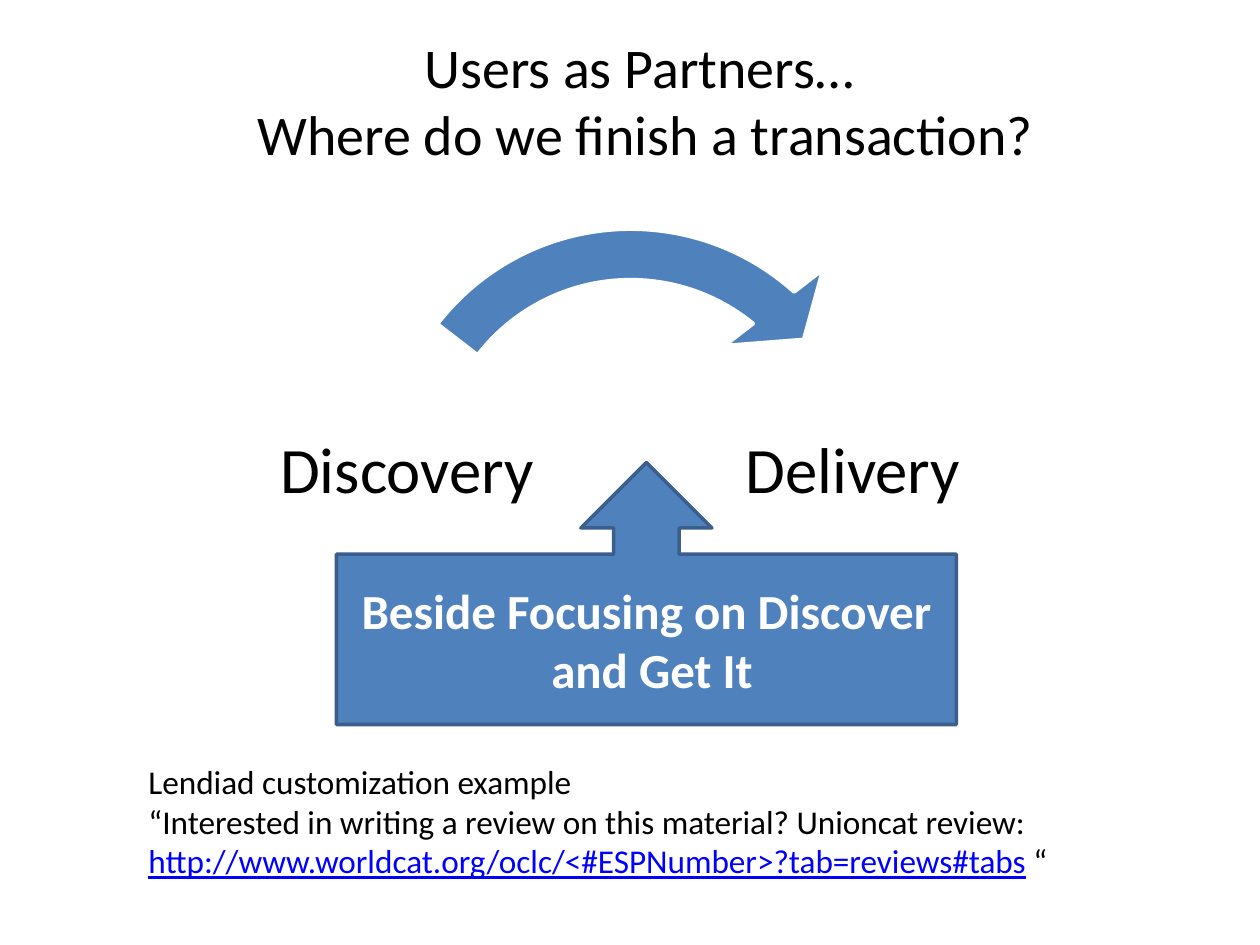
from dataclasses import dataclass

import pptx
import pptx.dml.color
import pptx.enum.shapes
import pptx.enum.text
import pptx.util

Inches = pptx.util.Inches
Pt = pptx.util.Pt
Shapes = pptx.enum.shapes.MSO_SHAPE
Align = pptx.enum.text.PP_ALIGN
Anchor = pptx.enum.text.MSO_ANCHOR


@dataclass(frozen=True)
class Theme:
    font: str = "Calibri"
    ink: str = "000000"
    paper: str = "FFFFFF"
    blue: str = "4F81BD"
    edge: str = "3A5F8C"
    link: str = "0000FF"
    title: int = 32
    label: int = 37
    callout: int = 28
    note: int = 19


THEME = Theme()


def rgb(code):
    return pptx.dml.color.RGBColor.from_string(code)


def write(para, text, size, color=THEME.ink, bold=False, underline=False,
          align=Align.LEFT, line_spacing=None):
    """Append text to a paragraph; a vertical tab becomes a line break."""
    para.alignment = align
    if line_spacing:
        para.line_spacing = line_spacing
    for index, line in enumerate(text.split("\v")):
        if index:
            para.add_line_break()
        span = para.add_run()
        span.text = line
        span.font.name = THEME.font
        span.font.size = Pt(size)
        span.font.color.rgb = rgb(color)
        span.font.bold = bold
        span.font.underline = underline


def add_title(page, text):
    title = page.shapes.title
    title.left, title.top = Inches(0.5), Inches(0)
    title.width, title.height = Inches(9.25), Inches(1.58)
    title.text_frame.vertical_anchor = Anchor.MIDDLE
    write(title.text_frame.paragraphs[0], text, THEME.title, align=Align.CENTER)


def add_box(page, left, top, width, height):
    box = page.shapes.add_textbox(
        Inches(left), Inches(top), Inches(width), Inches(height))
    box.text_frame.word_wrap = True
    return box.text_frame


def add_label(page, text, left):
    frame = add_box(page, left, 2.67, 2.16, 2.16)
    frame.vertical_anchor = Anchor.MIDDLE
    frame.margin_left = frame.margin_right = Inches(0.05)
    frame.margin_top = frame.margin_bottom = Inches(0.05)
    write(frame.paragraphs[0], text, THEME.label, align=Align.CENTER,
          line_spacing=0.9)


def add_shape(page, kind, left, top, width, height, line):
    shape = page.shapes.add_shape(
        kind, Inches(left), Inches(top), Inches(width), Inches(height))
    shape.shadow.inherit = False
    shape.fill.solid()
    shape.fill.fore_color.rgb = rgb(THEME.blue)
    shape.line.color.rgb = rgb(line)
    shape.line.width = Pt(2)
    return shape


def add_cycle_arrow(page):
    arrow = add_shape(page, Shapes.CIRCULAR_ARROW, 2.78, 1.53, 4.45, 4.45,
                      THEME.paper)
    for index, value in enumerate((0.09, 6.84, 186.54, 130.62, 0.11)):
        arrow.adjustments[index] = value


def add_callout(page, lines):
    callout = add_shape(page, Shapes.UP_ARROW_CALLOUT, 2.67, 3.67, 4.92, 2.08,
                        THEME.edge)
    frame = callout.text_frame
    frame.word_wrap = True
    frame.vertical_anchor = Anchor.MIDDLE
    for index, line in enumerate(lines):
        para = frame.add_paragraph() if index else frame.paragraphs[0]
        write(para, line, THEME.callout, color=THEME.paper, bold=True,
              align=Align.CENTER)


def add_example(page):
    frame = add_box(page, 1.08, 5.99, 8.42, 1.06)
    frame.auto_size = pptx.enum.text.MSO_AUTO_SIZE.SHAPE_TO_FIT_TEXT
    write(frame.paragraphs[0], "Lendiad customization example", THEME.note)
    quote = frame.add_paragraph()
    write(quote, "“Interested in writing a review on this material? "
                 "Unioncat review: ", THEME.note)
    write(quote, "http://www.worldcat.org/oclc/<#ESPNumber>?tab=reviews#tabs",
          THEME.note, color=THEME.link, underline=True)
    write(quote, " “", THEME.note)


def main():
    deck = pptx.Presentation()
    deck.slide_width, deck.slide_height = Inches(10), Inches(7.5)
    page = deck.slides.add_slide(deck.slide_layouts.get_by_name("Title Only"))
    add_title(page, "Users as Partners… \vWhere do we finish a transaction?")
    add_label(page, "Delivery", 5.69)
    add_label(page, "Discovery", 2.15)
    add_cycle_arrow(page)
    add_example(page)
    add_callout(page, ("Beside Focusing on Discover", " and Get It"))
    deck.save("out.pptx")


if __name__ == "__main__":
    main()
